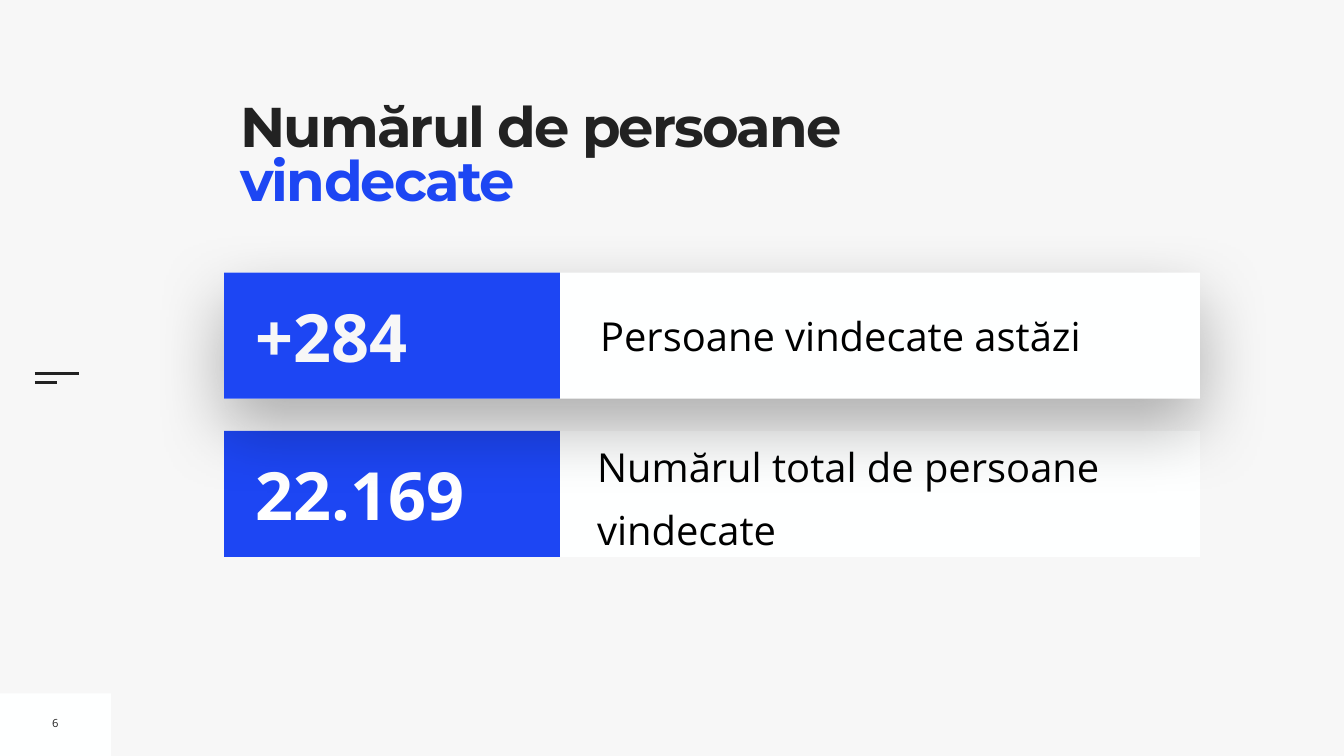
from lxml import etree
from pptx import Presentation
from pptx import util as u
from pptx.dml.color import RGBColor
from pptx.enum import shapes, text
from pptx.oxml import ns

BLUE = RGBColor(0x1D, 0x46, 0xF3)
DARK = RGBColor(0x22, 0x22, 0x22)
BLACK = RGBColor(0, 0, 0)
PAPER = RGBColor(0xF7, 0xF7, 0xF7)
CARD = RGBColor(0xFE, 0xFF, 0xFF)
WHITE = RGBColor(0xFF, 0xFF, 0xFF)


def add_text(paragraph, wording, *, size, color, font="Open Sans", bold=False, spacing=None):
    """Append one formatted run to a paragraph."""
    run = paragraph.add_run()
    run.text = wording
    run.font.name = font
    run.font.size = u.Pt(size)
    run.font.bold = bold
    run.font.color.rgb = color
    if spacing is not None:
        run._r.get_or_add_rPr().set("spc", str(round(spacing * 100)))


class SlideBuilder:
    """Hold the style and the current slide."""

    def __init__(self, slide):
        """Start on a slide with a plain background."""
        self.slide = slide
        slide.background.fill.solid()
        slide.background.fill.fore_color.rgb = PAPER

    def frame(self, shape, inset, anchor):
        """Set the margins and anchor of a text frame."""
        frame = shape.text_frame
        frame.word_wrap = True
        frame.auto_size = text.MSO_AUTO_SIZE.NONE
        frame.vertical_anchor = anchor
        frame.margin_left = frame.margin_right = u.Inches(inset)
        frame.margin_top = frame.margin_bottom = u.Inches(inset)
        return frame

    def title(self, box, parts):
        """Fill the title placeholder with coloured parts."""
        shape = self.slide.shapes.title
        shape.left, shape.top, shape.width, shape.height = map(u.Inches, box)
        shape.fill.solid()
        shape.fill.fore_color.rgb = PAPER
        paragraph = self.frame(shape, 0, text.MSO_ANCHOR.TOP).paragraphs[0]
        paragraph.alignment = text.PP_ALIGN.LEFT
        paragraph.line_spacing = 0.8
        for wording, color in parts:
            add_text(paragraph, wording, size=80, color=color, font="Montserrat", bold=True, spacing=-2.7)

    def rectangle(self, box, color, shadow=False):
        """Draw a filled rectangle, with a soft shadow on request."""
        shape = self.slide.shapes.add_shape(shapes.MSO_SHAPE.RECTANGLE, *map(u.Inches, box))
        shape.shadow.inherit = False
        shape.fill.solid()
        shape.fill.fore_color.rgb = color
        shape.line.fill.background()
        if shadow:
            effects = shape._element.spPr.find(ns.qn("a:effectLst"))
            outer = etree.SubElement(effects, ns.qn("a:outerShdw"), blurRad=str(u.Pt(100)),
                                     dist=str(u.Pt(40)), dir="5400000", rotWithShape="0")
            shade = etree.SubElement(outer, ns.qn("a:srgbClr"), val=str(BLACK))
            etree.SubElement(shade, ns.qn("a:alpha"), val="30000")

    def line(self, left, top, width):
        """Draw a horizontal rule."""
        rule = self.slide.shapes.add_connector(
            shapes.MSO_CONNECTOR.STRAIGHT, *map(u.Inches, (left, top, left + width, top)))
        rule.line.color.rgb = DARK
        rule.line.width = u.Pt(3)
        etree.SubElement(rule._element.spPr, ns.qn("a:effectLst"))

    def label(self, box, wording, inset=0.1, align=text.PP_ALIGN.LEFT, wrap=True,
              line_spacing=None, space_before=None, **style):
        """Add a vertically centred text box."""
        shape = self.slide.shapes.add_textbox(*map(u.Inches, box))
        frame = self.frame(shape, inset, text.MSO_ANCHOR.MIDDLE)
        frame.word_wrap = wrap
        paragraph = frame.paragraphs[0]
        paragraph.alignment = align
        if line_spacing:
            paragraph.line_spacing = line_spacing
        if space_before:
            paragraph.space_before = u.Pt(space_before)
        add_text(paragraph, wording, **style)

    def card(self, top, value, value_color, wording, label_box, shadow=False, **layout):
        """Draw a figure on blue beside its description on white."""
        left, height = 4.45, 2.5
        self.rectangle((left, top, 19.36, height), CARD, shadow)
        self.label(label_box, wording, size=57, color=BLACK, **layout)
        self.rectangle((left, top, 6.66, height), BLUE)
        self.label((left + 0.53, top + 0.35, 6.03, 1.8), value, size=95, color=value_color, bold=True)


def main():
    """Build and save the slide."""
    presentation = Presentation()
    presentation.slide_width = u.Inches(26.67)
    presentation.slide_height = u.Inches(15)
    builder = SlideBuilder(presentation.slides.add_slide(presentation.slide_layouts[5]))
    builder.rectangle((0, 13.76, 2.2, 1.24), CARD)
    builder.line(0.69, 7.41, 0.88)
    builder.line(0.69, 7.59, 0.44)
    builder.title((4.77, 2.07, 13.01, 2.73), [("Numărul de persoane ", DARK), ("vindecate", BLUE)])
    builder.label((0.93, 14.09, 0.34, 0.51), "6", align=text.PP_ALIGN.CENTER, wrap=False, size=16, color=DARK)
    builder.card(8.55, "22.169", WHITE, "Numărul total de persoane vindecate",
                 (11.85, 8.56, 11.95, 2.36), inset=0, line_spacing=1.3, space_before=20)
    builder.card(5.41, "+284", PAPER, "Persoane vindecate astăzi",
                 (11.81, 6.07, 11.76, 1.16), shadow=True)
    presentation.save("out.pptx")


if __name__ == "__main__":
    main()
